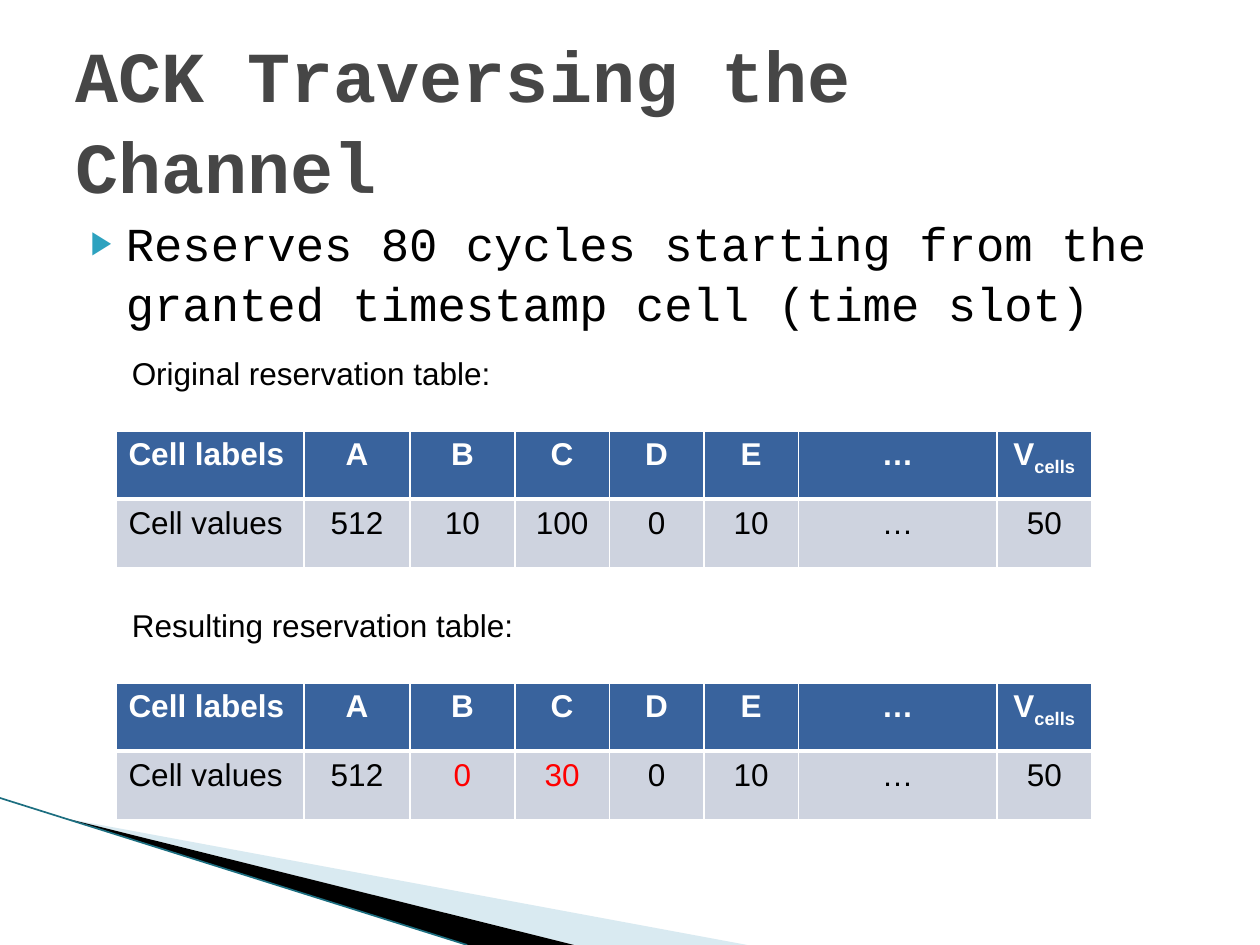
from lxml import etree
from pptx import Presentation
from pptx.dml.color import RGBColor
from pptx.enum import shapes, text
from pptx.oxml import ns
from pptx.util import Pt

COLORS = {
    "title": "464646", "body": "000000", "bullet": "2DA2BF", "changed": "FF0000",
    "header": "39639D", "values": "CED3DF", "white": "FFFFFF",
    "pale": "A0CBDC", "black": "000000", "edge": "1C6E80",
}
MONO, SANS = "Courier New", "Arial"
COLUMN_WIDTHS = [107.5, 60.5, 60, 54, 54, 54, 113.5, 54]
ROW_HEIGHT = 39
LABELS = ["Cell labels", "A", "B", "C", "D", "E", "…", "V"]
ORIGINAL = ["Cell values", "512", "10", "100", "0", "10", "…", "50"]
RESULT = ["Cell values", "512", "0", "30", "0", "10", "…", "50"]


def rgb(name):
    return RGBColor.from_string(COLORS[name])


def add_element(parent, tag, **attributes):
    return etree.SubElement(parent, ns.qn(tag), attributes)


def add_text(paragraph, content, size=18, font=SANS, color="body", bold=False,
             align=None, baseline=None):
    if align is not None:
        paragraph.alignment = align
    run = paragraph.add_run()
    run.text = content
    run.font.size, run.font.name, run.font.bold = Pt(size), font, bold
    run.font.color.rgb = rgb(color)
    if baseline is not None:
        run.font._element.set("baseline", str(baseline))


def place(shape, left, top, width, height):
    shape.left, shape.top = Pt(left), Pt(top)
    shape.width, shape.height = Pt(width), Pt(height)


def add_wedge(slide, points, color, opacity=None):
    corners = [(Pt(x), Pt(y)) for x, y in points]
    builder = slide.shapes.build_freeform(*corners[0], scale=1.0)
    builder.add_line_segments(corners[1:], close=True)
    wedge = builder.convert_to_shape()
    wedge.shadow.inherit = False
    wedge.fill.solid()
    wedge.fill.fore_color.rgb = rgb(color)
    wedge.line.fill.background()
    if opacity is not None:
        fill_color = wedge._element.spPr.find(".//" + ns.qn("a:srgbClr"))
        add_element(fill_color, "a:alpha", val=str(opacity * 1000))


def add_corner_swoosh(slide, left, top, width, height):
    bottom = top + height
    tip_x, tip_y = left + 39, top + 12
    add_wedge(slide, [(tip_x, tip_y), (left + width, bottom), (left + 328, bottom)],
              "pale", opacity=40)
    add_wedge(slide, [(tip_x, tip_y), (left + 328, bottom), (left + 267, bottom)], "black")
    edge = slide.shapes.add_connector(
        shapes.MSO_CONNECTOR.STRAIGHT, Pt(left), Pt(top), Pt(left + 267), Pt(bottom))
    edge.line.color.rgb = rgb("edge")
    edge.line.width = Pt(0.95)
    add_element(edge._element.spPr, "a:effectLst")


def add_title(slide, left, top, width, height):
    title = slide.shapes.title
    place(title, left, top, width, height)
    frame = title.text_frame
    frame.word_wrap = True
    frame.auto_size = text.MSO_AUTO_SIZE.NONE
    frame.vertical_anchor = text.MSO_ANCHOR.MIDDLE
    paragraph = frame.paragraphs[0]
    paragraph.line_spacing = 1.06
    add_text(paragraph, "ACK Traversing the Channel", size=41, font=MONO,
             color="title", bold=True, align=text.PP_ALIGN.LEFT)


def add_bullet_body(slide, left, top, width, height):
    box = slide.shapes.add_textbox(Pt(left), Pt(top), Pt(width), Pt(height))
    box.text_frame.word_wrap = True
    paragraph = box.text_frame.paragraphs[0]
    paragraph.line_spacing = 1.06
    properties = paragraph._p.get_or_add_pPr()
    properties.set("marL", str(Pt(28.8)))
    properties.set("indent", str(Pt(-20)))
    bullet_color = add_element(properties, "a:buClr")
    add_element(bullet_color, "a:srgbClr", val=COLORS["bullet"])
    add_element(properties, "a:buSzPct", val="68000")
    add_element(properties, "a:buFont", typeface=SANS)
    add_element(properties, "a:buChar", char="▶")
    add_text(paragraph, "Reserves 80 cycles starting from the granted timestamp cell (time slot)",
             size=27, font=MONO)


def set_borders(cell, **widths):
    properties = cell._tc.get_or_add_tcPr()
    for position, side in enumerate("LRTB"):
        line = etree.Element(ns.qn("a:ln" + side), w=str(Pt(widths.get(side, 1))))
        fill = add_element(line, "a:solidFill")
        add_element(fill, "a:srgbClr", val=COLORS["white"])
        properties.insert(position, line)


def add_reservation_table(slide, caption, values, changed, left, top):
    # Caption
    box = slide.shapes.add_textbox(Pt(left + 2), Pt(top), Pt(235), Pt(29))
    box.text_frame.word_wrap = False
    add_text(box.text_frame.paragraphs[0], caption)

    # Table
    table = slide.shapes.add_table(2, len(COLUMN_WIDTHS), Pt(left), Pt(top + 47.5),
                                   Pt(sum(COLUMN_WIDTHS)), Pt(2 * ROW_HEIGHT)).table
    table.horz_banding = False
    for row in table.rows:
        row.height = Pt(ROW_HEIGHT)
    last = len(COLUMN_WIDTHS) - 1
    for column, width in enumerate(COLUMN_WIDTHS):
        table.columns[column].width = Pt(width)
        align = text.PP_ALIGN.CENTER if column else text.PP_ALIGN.LEFT
        header, value = table.cell(0, column), table.cell(1, column)
        for cell, fill in ((header, "header"), (value, "values")):
            cell.fill.solid()
            cell.fill.fore_color.rgb = rgb(fill)
        set_borders(header, B=3)
        set_borders(value, T=3)
        label = header.text_frame.paragraphs[0]
        add_text(label, LABELS[column], color="white", bold=True, align=align)
        if column == last:
            add_text(label, "cells", color="white", bold=True, baseline=-25000)
        add_text(value.text_frame.paragraphs[0], values[column], align=align,
                 color="changed" if column in changed else "body")


def main():
    presentation = Presentation()
    presentation.slide_width, presentation.slide_height = Pt(720), Pt(540)
    slide = presentation.slides.add_slide(presentation.slide_layouts[5])
    add_corner_swoosh(slide, 0, 456, 427, 84)
    add_bullet_body(slide, 36, 117, 648, 356)
    add_title(slide, 36, 21.6, 648, 90)
    add_reservation_table(slide, "Original reservation table:", ORIGINAL, (), 66.25, 198.75)
    add_reservation_table(slide, "Resulting reservation table:", RESULT, (2, 3), 66.25, 342.75)
    presentation.save("out.pptx")


if __name__ == "__main__":
    main()
